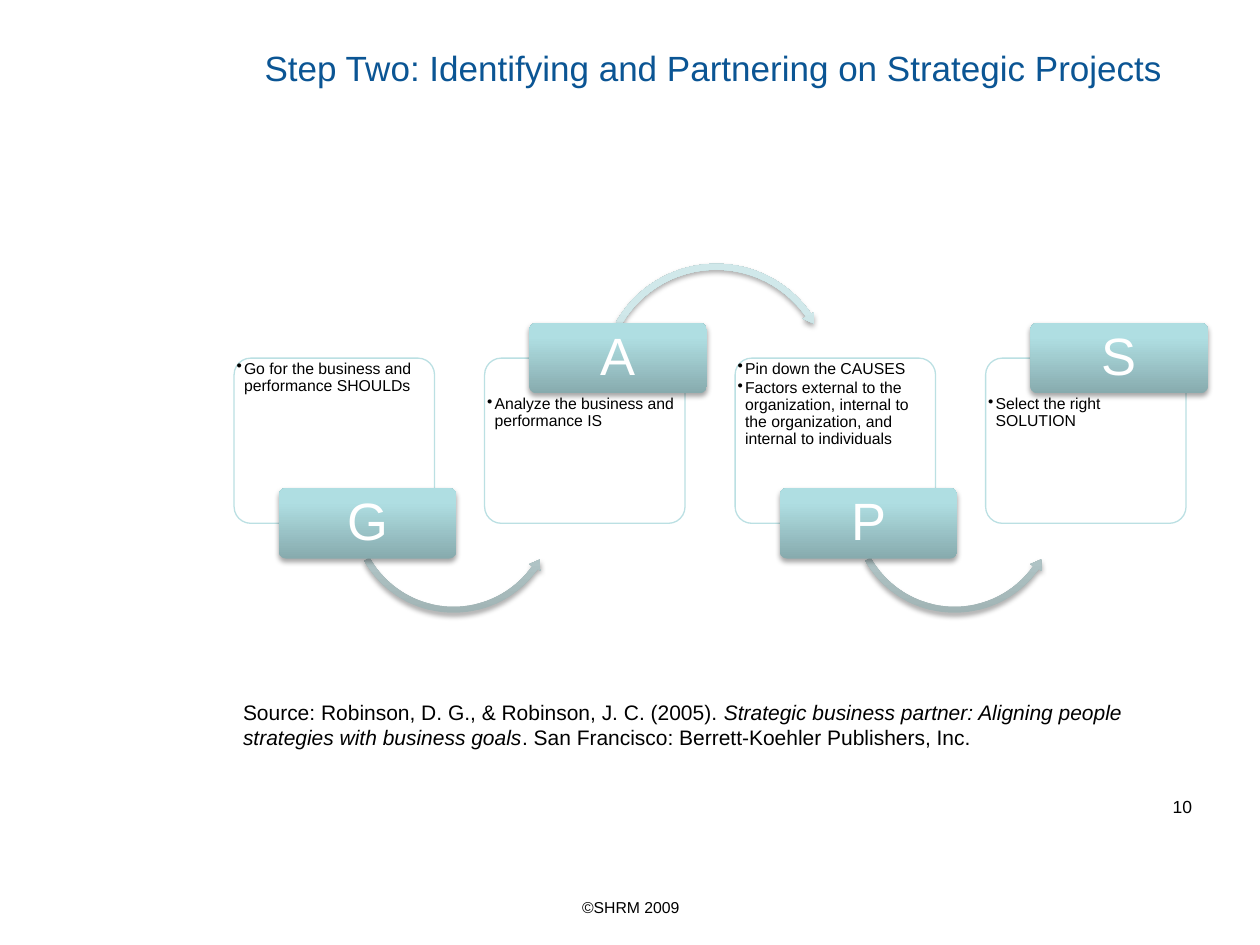
from copy import deepcopy
from dataclasses import dataclass

from lxml.etree import SubElement
from pptx import Presentation
from pptx.dml.color import RGBColor
from pptx.enum.shapes import MSO_SHAPE
from pptx.enum.text import MSO_ANCHOR, MSO_AUTO_SIZE, PP_ALIGN
from pptx.oxml.ns import qn
from pptx.util import Cm, Pt


@dataclass(frozen=True)
class Theme:
    font: str = "Arial"
    title: str = "0B5594"
    text: str = "000000"
    paper: str = "FFFFFF"
    outline: str = "BBE0E3"
    band: tuple = ((0, "87ABAE"), (0.8, "AFDEE2"), (1, "AFE0E4"))
    arrow: tuple = ((0, "A0B3B4"), (0.8, "D0E8EA"), (1, "D0EAEC"))
    title_size: int = 20
    letter_size: int = 30
    source_size: int = 12
    number_size: int = 10
    small_size: int = 9


@dataclass(frozen=True)
class Box:
    """A rectangle in centimetres."""
    left: float
    top: float
    width: float
    height: float

    def inner(self, left, top, width, height):
        return Box(self.left + left, self.top + top, width, height)

    def lengths(self):
        return [Cm(value) for value in (self.left, self.top, self.width, self.height)]


@dataclass(frozen=True)
class Arrow:
    """A curved arrow; left and top are offsets from its card."""
    kind: MSO_SHAPE
    left: float
    top: float
    size: float
    adjustments: tuple


THEME = Theme()
LOW_ARROW = Arrow(MSO_SHAPE.LEFT_CIRCULAR_ARROW, 2.28, 0.92, 4.29,
                  (0.028, 3.37, 21.125, 90.245, 0.032))
HIGH_ARROW = Arrow(MSO_SHAPE.CIRCULAR_ARROW, 2.27, -1.98, 4.8,
                   (0.025, 2.987, 195.258, 125.755, 0.029))
STEPS = [
    ("G", ["Go for the business and performance SHOULDs"]),
    ("A", ["Analyze the business and performance IS"]),
    ("P", ["Pin down the CAUSES",
           "Factors external to the organization, internal to the organization, "
           "and internal to individuals"]),
    ("S", ["Select the right SOLUTION"]),
]
SOURCE = [
    ("Source: Robinson, D. G., & Robinson, J. C. (2005). ", False),
    ("Strategic business partner: Aligning people strategies with business goals", True),
    (". San Francisco: Berrett-Koehler Publishers, Inc.", False),
]


def style(para, size, color, align=PP_ALIGN.LEFT):
    para.alignment = align
    para.font.name = THEME.font
    para.font.size = Pt(size)
    para.font.color.rgb = RGBColor.from_string(color)


def set_insets(frame, across, down):
    frame.margin_left = frame.margin_right = Cm(across)
    frame.margin_top = frame.margin_bottom = Cm(down)


def add_frame(page, box):
    frame = page.shapes.add_textbox(*box.lengths()).text_frame
    frame.word_wrap = True
    return frame


def add_line_of_text(page, box, text, size, align):
    para = add_frame(page, box).paragraphs[0]
    para.text = text
    style(para, size, THEME.text, align)


def add_bullet(para):
    props = para._p.get_or_add_pPr()
    props.set("marL", str(Cm(0.15)))
    props.set("indent", str(Cm(-0.15)))
    SubElement(props, qn("a:buChar"), char="•")


def add_glossy_shape(page, kind, box, adjustments, stops):
    """A borderless shape with an upward gradient and a soft shadow."""
    shape = page.shapes.add_shape(kind, *box.lengths())
    for index, value in enumerate(adjustments):
        shape.adjustments[index] = value
    shape.line.fill.background()

    shape.fill.gradient()
    shape.fill.gradient_angle = 90
    stop_list = shape._element.spPr.find(".//" + qn("a:gsLst"))
    stop_list.append(deepcopy(stop_list[-1]))
    for stop, (position, color) in zip(shape.fill.gradient_stops, stops):
        stop.position = position
        stop.color.rgb = RGBColor.from_string(color)

    shape.shadow.inherit = False
    effects = shape._element.spPr.find(qn("a:effectLst"))
    shadow = SubElement(effects, qn("a:outerShdw"), blurRad=str(Pt(3.1)),
                        dist=str(Pt(1.8)), dir="5400000", rotWithShape="0")
    black = SubElement(shadow, qn("a:srgbClr"), val="000000")
    SubElement(black, qn("a:alpha"), val="35000")
    return shape


def add_card(page, box):
    card = page.shapes.add_shape(MSO_SHAPE.ROUNDED_RECTANGLE, *box.lengths())
    card.adjustments[0] = 0.1
    card.shadow.inherit = False
    card.fill.solid()
    card.fill.fore_color.rgb = RGBColor.from_string(THEME.paper)
    color = card._element.spPr.find(qn("a:solidFill"))[0]
    SubElement(color, qn("a:alpha"), val="90000")
    card.line.color.rgb = RGBColor.from_string(THEME.outline)
    card.line.width = Pt(0.75)


def add_step(page, box, letter, points, raised, arrow):
    """A card whose letter band straddles its top edge if raised, else its bottom."""
    band_height = 1.42
    overlap = band_height / 2
    add_card(page, box)

    text_top = overlap if raised else 0
    frame = add_frame(page, box.inner(0, text_top, box.width, box.height - overlap))
    set_insets(frame, 0.05, 0.05)
    for index, point in enumerate(points):
        para = frame.add_paragraph() if index else frame.paragraphs[0]
        para.text = point
        para.level = 1
        add_bullet(para)
        para.line_spacing = 0.9
        para.space_after = Pt(1.35)
        style(para, THEME.small_size, THEME.text)

    if arrow:
        arrow_box = box.inner(arrow.left, arrow.top, arrow.size, arrow.size)
        add_glossy_shape(page, arrow.kind, arrow_box, arrow.adjustments, THEME.arrow)

    band_top = (0 if raised else box.height) - overlap
    band = add_glossy_shape(page, MSO_SHAPE.ROUNDED_RECTANGLE,
                            box.inner(0.9, band_top, 3.58, band_height),
                            [0.1], THEME.band)
    set_insets(band.text_frame, 0.15, 0.1)
    band.text_frame.vertical_anchor = MSO_ANCHOR.MIDDLE
    para = band.text_frame.paragraphs[0]
    para.text = letter
    para.line_spacing = 0.9
    style(para, THEME.letter_size, THEME.paper, PP_ALIGN.CENTER)


def add_process(page, box):
    card_width, pitch = 4.04, 5.05
    for index, (letter, points) in enumerate(STEPS):
        raised = index % 2 == 1
        arrow = HIGH_ARROW if raised else LOW_ARROW
        if index == len(STEPS) - 1:
            arrow = None
        card = box.inner(index * pitch, 0, card_width, box.height)
        add_step(page, card, letter, points, raised, arrow)


def set_title(page, box, text):
    title = page.shapes.title
    title.left, title.top, title.width, title.height = box.lengths()
    frame = title.text_frame
    frame.text = text
    frame.auto_size = MSO_AUTO_SIZE.NONE
    frame.vertical_anchor = MSO_ANCHOR.MIDDLE
    style(frame.paragraphs[0], THEME.title_size, THEME.title)


def add_source(page, box):
    para = add_frame(page, box).paragraphs[0]
    for text, italic in SOURCE:
        span = para.add_run()
        span.text = text
        span.font.italic = italic
    style(para, THEME.source_size, THEME.text)


def main():
    deck = Presentation()
    deck.slide_width, deck.slide_height = Cm(25.4), Cm(19.05)
    page = deck.slides.add_slide(deck.slide_layouts[5])
    set_title(page, Box(5.08, 0, 20.32, 2.74),
              "Step Two: Identifying and Partnering on Strategic Projects")
    add_process(page, Box(4.72, 7.22, 19.19, 3.33))
    add_line_of_text(page, Box(22.58, 15.93, 1.7, 1.45), "10",
                     THEME.number_size, PP_ALIGN.RIGHT)
    add_source(page, Box(4.65, 13.97, 19.69, 1.27))
    add_line_of_text(page, Box(8.69, 17.98, 8.05, 0.69), "©SHRM 2009",
                     THEME.small_size, PP_ALIGN.CENTER)
    deck.save("out.pptx")


if __name__ == "__main__":
    main()
